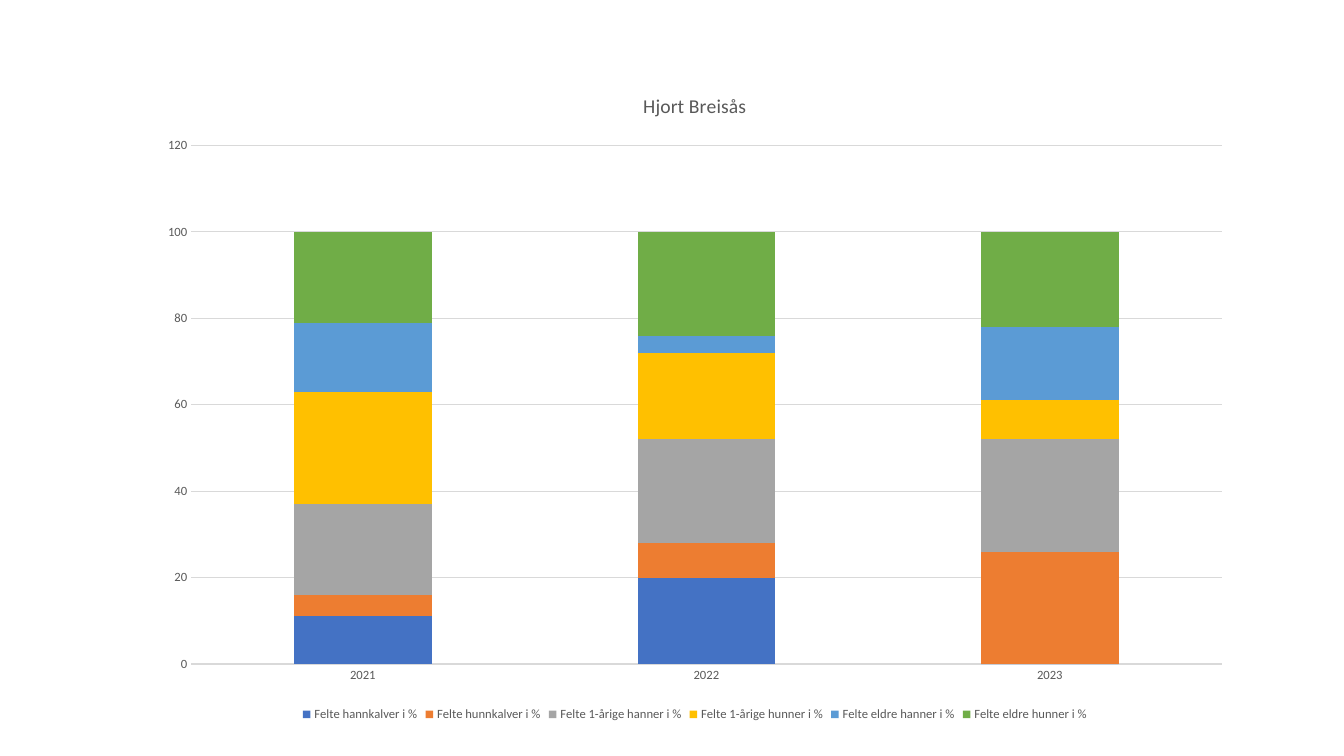
"""Build a slide with a stacked column chart of felled deer by year."""
from pptx import Presentation
from pptx.chart.data import CategoryChartData
from pptx.dml.color import RGBColor
from pptx.enum import chart as ch
from pptx.util import Cm, Pt

HEADING = "Hjort Breisås"
YEARS = ["2021", "2022", "2023"]
GROUPS = [
    ("Felte hannkalver i %", (11, 20, 0), RGBColor(0x44, 0x72, 0xC4)),
    ("Felte hunnkalver i %", (5, 8, 26), RGBColor(0xED, 0x7D, 0x31)),
    ("Felte 1-årige hanner i %", (21, 24, 26), RGBColor(0xA5, 0xA5, 0xA5)),
    ("Felte 1-årige hunner i %", (26, 20, 9), RGBColor(0xFF, 0xC0, 0x00)),
    ("Felte eldre hanner i %", (16, 4, 17), RGBColor(0x5B, 0x9B, 0xD5)),
    ("Felte eldre hunner i %", (21, 24, 22), RGBColor(0x70, 0xAD, 0x47)),
]
GREY = RGBColor(0x59, 0x59, 0x59)
RULE = RGBColor(0xD9, 0xD9, 0xD9)


def format_font(font, size=9, color=GREY, bold=False):
    """Apply the slide's typeface with the given size, colour and weight."""
    font.name = "Calibri"
    font.size = Pt(size)
    font.bold = bold
    font.color.rgb = color


def write_text(frame, wording, **font_format):
    """Put wording in a text frame and format it."""
    run = frame.paragraphs[0].add_run()
    run.text = wording
    format_font(run.font, **font_format)


def draw_rule(line):
    """Give a line the thin light grey used for axis and grid."""
    line.color.rgb = RULE
    line.width = Pt(0.75)


def add_harvest(slide):
    """Add the stacked columns with heading, axes and legend."""
    shares = CategoryChartData()
    shares.categories = YEARS
    for name, percentages, _ in GROUPS:
        shares.add_series(name, percentages)
    harvest = slide.shapes.add_chart(
        ch.XL_CHART_TYPE.COLUMN_STACKED,
        Cm(3.68), Cm(1.78), Cm(27.66), Cm(16.51), shares,
    ).chart
    format_font(harvest.font, size=10)

    harvest.has_title = True
    write_text(harvest.chart_title.text_frame, HEADING, size=14)
    harvest.chart_title.include_in_layout = False

    harvest.has_legend = True
    harvest.legend.position = ch.XL_LEGEND_POSITION.BOTTOM
    harvest.legend.include_in_layout = False
    format_font(harvest.legend.font)

    years, percent = harvest.category_axis, harvest.value_axis
    for axis in (years, percent):
        axis.major_tick_mark = axis.minor_tick_mark = ch.XL_TICK_MARK.NONE
        format_font(axis.tick_labels.font)
    draw_rule(years.format.line)
    percent.format.line.fill.background()
    percent.has_major_gridlines = True
    draw_rule(percent.major_gridlines.format.line)
    percent.minimum_scale, percent.maximum_scale = 0, 120
    percent.major_unit = 20

    columns = harvest.plots[0]
    columns.gap_width, columns.overlap = 150, 100
    columns.vary_by_categories = False
    for group, (_, _, color) in zip(columns.series, GROUPS):
        group.format.fill.solid()
        group.format.fill.fore_color.rgb = color
        group.invert_if_negative = False


def main():
    """Create the deck and save it."""
    deck = Presentation()
    deck.slide_width, deck.slide_height = Cm(33.87), Cm(19.05)
    add_harvest(deck.slides.add_slide(deck.slide_layouts[6]))
    deck.save("out.pptx")


if __name__ == "__main__":
    main()
